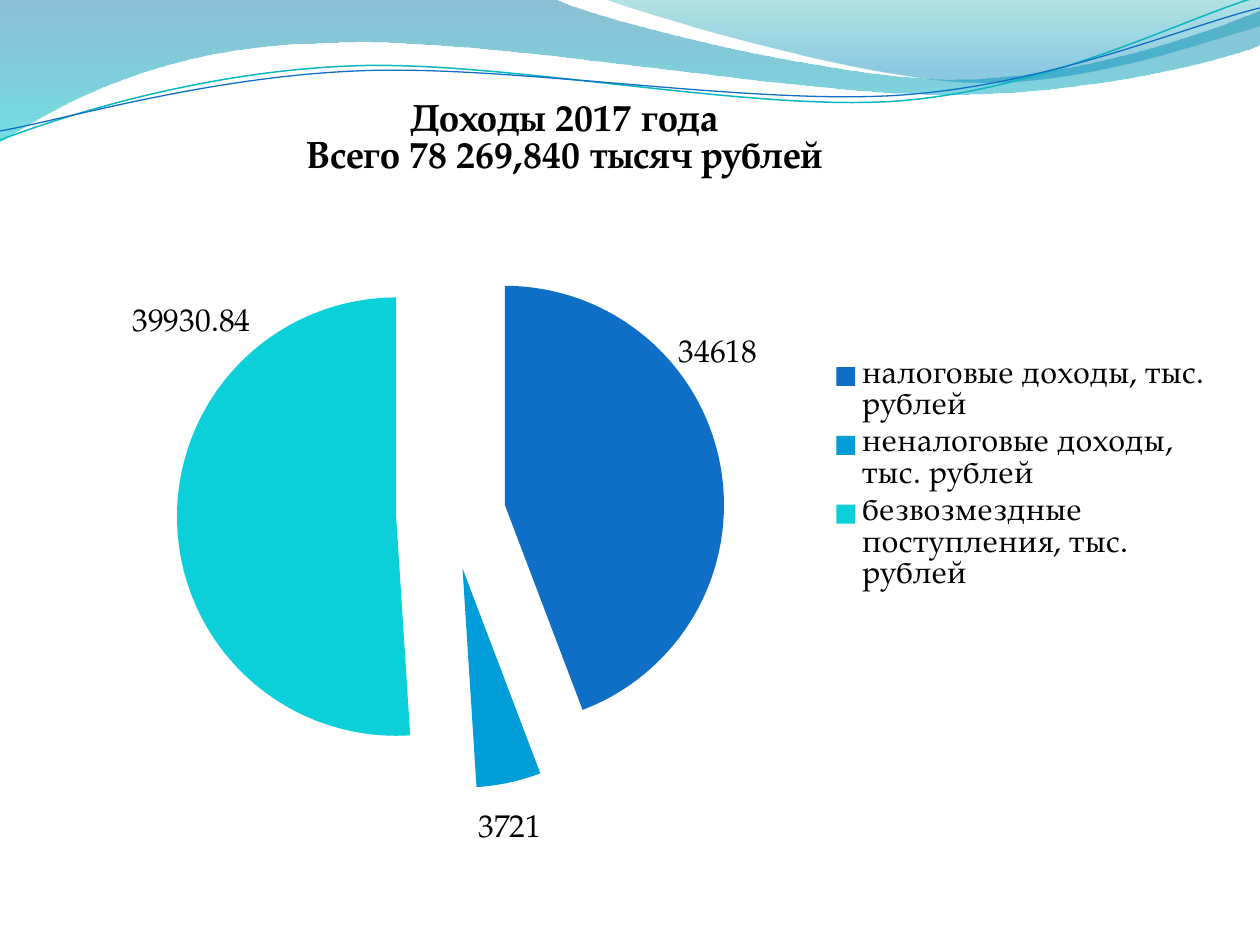
"""Build the 2017 income slide: wave header and exploded pie chart."""
from lxml import etree
from pptx import Presentation
from pptx.chart.data import CategoryChartData
from pptx.dml.color import RGBColor
from pptx.enum.chart import XL_CHART_TYPE, XL_LABEL_POSITION, XL_LEGEND_POSITION
from pptx.oxml.ns import qn
from pptx.util import Pt

PIE = XL_CHART_TYPE.PIE
OUT = XL_LABEL_POSITION.OUTSIDE_END
RIGHT = XL_LEGEND_POSITION.RIGHT
PX = 914400 / 126

THEME = {
    "font": "TeX Gyre Pagella", "text": "000000", "size": 18, "title": 21.6,
    "slices": ["0F6FC6", "009DD9", "0BD0D9"],
}
TITLE = ["Доходы 2017 года", "Всего 78 269,840 тысяч рублей"]
INCOME = [
    ("налоговые доходы, тыс. рублей", 34618),
    ("неналоговые доходы, тыс. рублей", 3721),
    ("безвозмездные поступления, тыс. рублей", 39930.84),
]
SHIFTS = [(-49, -93), (-32, 25), (81, -199)]
FRAME = (35, 37, 1191, 883)
PLOT = (177, 241, 548, 548)
LEGEND = (828, 355, 385, 244)
HEAD = (303, 98)

BANDS = [
    ([(0, 0), (554, -1), (600, 21, 837, 79, 955, 79),
      (1075, 79, 1207, 33, 1260, 11), (1261, 45),
      (1239, 55, 1096, 96, 940, 94), (784, 94, 481, 35, 324, 43),
      (163, 45, 58, 105, -1, 142), (0, 0)],
     [(0, "0074A1", 45), (1, "00C6CF", 55)]),
    ([(604, -1), (641, 14, 859, 78, 969, 82),
      (1079, 87, 1211, 40, 1260, 26), (1260, 0), (604, -1)],
     [(0, "00A1A9", 30), (0.8, "008BBF", 45)]),
]
WAVES = [
    ([(0, 140), (60, 117, 199, 72, 349, 66), (498, 59, 747, 112, 898, 101),
      (1050, 89, 1182, 19, 1257, -3)], "0AB8BF", 0.85),
    ([(0, 131), (59, 121, 207, 77, 357, 71), (508, 64, 752, 106, 903, 95),
      (1053, 84, 1186, 26, 1260, 8)], "0F6FC6", 0.75),
]


def color(code):
    return RGBColor.from_string(code)


def draw(slide, parts, close):
    dots = [part[i:i + 2] for part in parts for i in range(0, len(part), 2)]
    pen = slide.shapes.build_freeform(*dots[0], scale=PX)
    pen.add_line_segments(dots[1:], close=close)
    shape = pen.convert_to_shape()
    shape.shadow.inherit = False
    lines = iter(list(shape.element.iter(qn("a:lnTo"))))
    for part in parts[1:]:
        group = [next(lines) for _ in range(len(part) // 2)]
        if len(group) == 3:
            curve = etree.Element(qn("a:cubicBezTo"))
            group[0].addprevious(curve)
            for line in group:
                curve.append(line[0])
                line.getparent().remove(line)
    return shape


def add_band(slide, parts, stops):
    shape = draw(slide, parts, True)
    shape.line.fill.background()
    shape.fill.gradient()
    shape.fill.gradient_angle = 270
    for stop, (place, code, _) in zip(shape.fill.gradient_stops, stops):
        stop.position = place
        stop.color.rgb = color(code)
    tags = shape.element.spPr.iter(qn("a:srgbClr"))
    for tag, (_, _, alpha) in zip(tags, stops):
        etree.SubElement(tag, qn("a:alpha"), val=str(alpha * 1000))


def add_wave(slide, parts, code, width):
    shape = draw(slide, parts, False)
    shape.fill.background()
    shape.line.color.rgb = color(code)
    shape.line.width = Pt(width)


def set_layout(owner, after, box, mode="edge", inner=False):
    for old in owner.findall(qn("c:layout")):
        owner.remove(old)
    layout = etree.Element(qn("c:layout"))
    manual = etree.SubElement(layout, qn("c:manualLayout"))
    if inner:
        etree.SubElement(manual, qn("c:layoutTarget"), val="inner")
    if mode == "edge":
        for name in ("xMode", "yMode"):
            etree.SubElement(manual, qn("c:" + name), val="edge")
        box = (box[0] - FRAME[0], box[1] - FRAME[1], *box[2:])
    for name, size, full in zip("xywh", box, FRAME[2:] * 2):
        etree.SubElement(manual, qn("c:" + name), val=f"{size / full:.4f}")
    if after:
        owner.find(qn(after)).addnext(layout)
    else:
        owner.insert(0, layout)


def style(font, size, bold=False):
    font.name = THEME["font"]
    font.size = Pt(size)
    font.bold = bold
    font.color.rgb = color(THEME["text"])


def add_title(chart):
    chart.has_title = True
    frame = chart.chart_title.text_frame
    frame.text = "\n".join(TITLE)
    for para in frame.paragraphs:
        for run in para.runs:
            style(run.font, THEME["title"], True)
    set_layout(chart.chart_title._element, "c:tx", HEAD)


def add_labels(series):
    labels = series.data_labels
    labels.show_value = True
    labels.position = OUT
    for tag in labels._element.findall(qn("c:showLeaderLines")):
        tag.set("val", "0")
    for i, code in enumerate(THEME["slices"]):
        point = series.points[i]
        point.format.fill.solid()
        point.format.fill.fore_color.rgb = color(code)
        style(point.data_label.font, THEME["size"])
        point.data_label.position = OUT
    for tag, shift in zip(series._element.iter(qn("c:dLbl")), SHIFTS):
        set_layout(tag, "c:idx", shift, mode="factor")
        for body in tag.iter(qn("a:bodyPr")):
            body.set("wrap", "none")


def add_pie(slide):
    data = CategoryChartData()
    data.categories = [name for name, _ in INCOME]
    data.add_series("Series 1", [value for _, value in INCOME])
    box = [round(n * PX) for n in FRAME]
    chart = slide.shapes.add_chart(PIE, *box, data).chart
    style(chart.font, THEME["size"])
    add_title(chart)
    chart.has_legend = True
    chart.legend.position = RIGHT
    chart.legend.include_in_layout = False
    set_layout(chart.legend._element, "c:legendPos", LEGEND)
    plot = chart.plots[0]
    set_layout(plot._element.getparent(), None, PLOT, inner=True)
    series = plot.series[0]
    burst = etree.Element(qn("c:explosion"), val="25")
    series._element.find(qn("c:tx")).addnext(burst)
    add_labels(series)


def main():
    deck = Presentation()
    deck.slide_width, deck.slide_height = round(1260 * PX), round(945 * PX)
    slide = deck.slides.add_slide(deck.slide_layouts[6])
    for band in BANDS:
        add_band(slide, *band)
    for wave in WAVES:
        add_wave(slide, *wave)
    add_pie(slide)
    deck.save("out.pptx")


if __name__ == "__main__":
    main()
